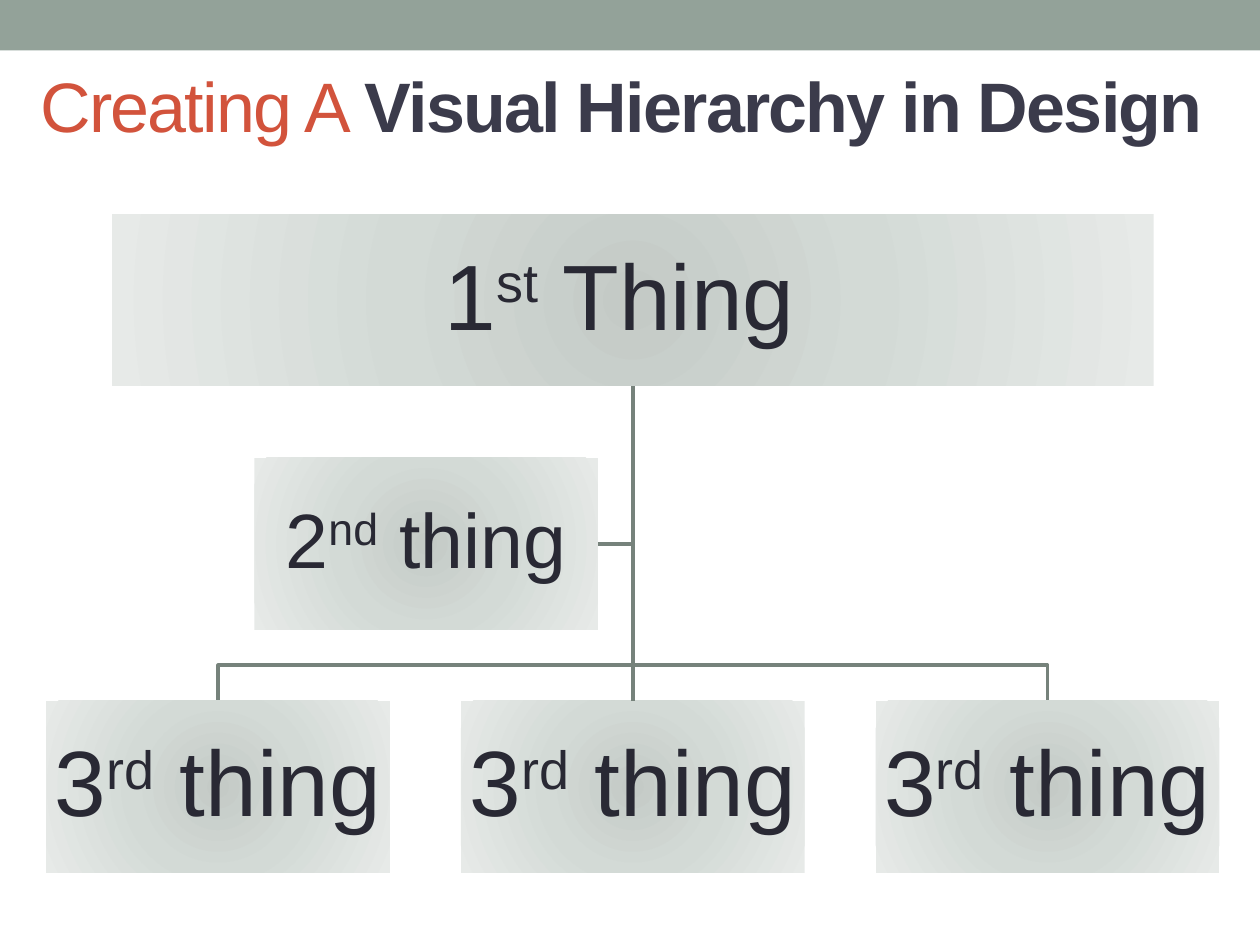
from lxml.etree import SubElement
from pptx import Presentation
from pptx.dml.color import RGBColor
from pptx.enum.shapes import MSO_CONNECTOR as Connector, MSO_SHAPE as Shape
from pptx.enum.text import MSO_ANCHOR as Anchor, MSO_AUTO_SIZE as AutoSize, PP_ALIGN as Align
from pptx.oxml import parse_xml
from pptx.oxml.ns import nsdecls, qn
from pptx.util import Pt

# Content
TITLE = [("Creating A ", "accent", False), ("Visual Hierarchy in Design", "title", True)]
FIRST = ("1", "st", " Thing ")
SECOND = ("2", "nd", " thing")
THIRDS = [("3", "rd", " thing")] * 3

COLORS = {"band": "93A299", "accent": "D2533C", "title": "3B3B4B", "text": "292934",
          "line": "76827B"}
GRADIENT = [(0, "C4CAC6"), (45, "D3DAD6"), (100, "E7EAE8")]
FONT = "Arial"

# Layout in points
WIDTH, HEIGHT = 720, 540
CENTER = 361.6
BOX_WIDTH, BOX_HEIGHT, FIRST_WIDTH = 196.4, 98.2, 595.4
FIRST_TOP, SECOND_TOP, THIRD_TOP = 122.4, 261.6, 400.6
SECOND_LEFT, THIRD_STEP = 145.3, 237
BUS_Y = 380.2
LINE_WIDTH = 2.08


def color(name):
    return RGBColor.from_string(COLORS[name])


def format_run(run, size, color_name, bold=False):
    run.font.name = FONT
    run.font.size = Pt(size)
    run.font.bold = bold
    run.font.color.rgb = color(color_name)


def add_box(slide, left, top, width, parts, size, inset):
    box = slide.shapes.add_shape(Shape.RECTANGLE, Pt(left), Pt(top), Pt(width), Pt(BOX_HEIGHT))
    box.shadow.inherit = False
    box.line.fill.background()
    # Radial gradient, dark in the middle
    stops = "".join(f'<a:gs pos="{position * 1000}"><a:srgbClr val="{value}"/></a:gs>'
                    for position, value in GRADIENT)
    gradient = parse_xml(
        f'<a:gradFill {nsdecls("a")} rotWithShape="1"><a:gsLst>{stops}</a:gsLst>'
        '<a:path path="circle"><a:fillToRect l="100000" t="100000" r="100000" b="100000"/>'
        '</a:path></a:gradFill>')
    box._element.spPr.find(qn("a:prstGeom")).addnext(gradient)

    frame = box.text_frame
    frame.word_wrap = True
    frame.vertical_anchor = Anchor.MIDDLE
    frame.margin_left = frame.margin_right = frame.margin_top = frame.margin_bottom = Pt(inset)
    paragraph = frame.paragraphs[0]
    paragraph.alignment = Align.CENTER
    paragraph.line_spacing = 0.9
    for index, part in enumerate(parts):
        run = paragraph.add_run()
        run.text = part
        format_run(run, size, "text")
        if index == 1:
            run.font._element.set("baseline", "30000")
    return box


def style_line(line):
    line.color.rgb = color("line")
    line.width = Pt(LINE_WIDTH)


def add_elbow(slide, points):
    points = [(Pt(x), Pt(y)) for x, y in points]
    builder = slide.shapes.build_freeform(*points[0])
    builder.add_line_segments(points[1:], close=False)
    elbow = builder.convert_to_shape()
    elbow.shadow.inherit = False
    elbow.fill.background()
    style_line(elbow.line)


presentation = Presentation()
presentation.slide_width, presentation.slide_height = Pt(WIDTH), Pt(HEIGHT)
slide = presentation.slides.add_slide(presentation.slide_layouts[5])

# Top band
band = slide.shapes.add_shape(Shape.RECTANGLE, 0, 0, Pt(WIDTH), Pt(28.8))
band.shadow.inherit = False
band.fill.solid()
band.fill.fore_color.rgb = color("band")
band.line.fill.background()

# Title
title = slide.shapes.title
title.left, title.top, title.width, title.height = Pt(15.8), Pt(28.8), Pt(692.6), Pt(77.8)
frame = title.text_frame
frame.word_wrap = True
frame.auto_size = AutoSize.NONE
frame.vertical_anchor = Anchor.TOP
frame.margin_top = Pt(7)
paragraph = frame.paragraphs[0]
paragraph.alignment = Align.LEFT
for text, color_name, bold in TITLE:
    run = paragraph.add_run()
    run.text = text
    format_run(run, 40, color_name, bold)
    run.font._element.set("spc", "-100")

# Elbow lines to the second box and the outer third boxes
first_bottom = FIRST_TOP + BOX_HEIGHT
second_middle = SECOND_TOP + BOX_HEIGHT / 2
add_elbow(slide, [(CENTER, first_bottom), (CENTER, second_middle),
                  (SECOND_LEFT + BOX_WIDTH, second_middle)])
for x in (CENTER + THIRD_STEP, CENTER - THIRD_STEP):
    add_elbow(slide, [(CENTER, first_bottom), (CENTER, BUS_Y), (x, BUS_Y), (x, THIRD_TOP)])

# Boxes
first = add_box(slide, CENTER - FIRST_WIDTH / 2, FIRST_TOP, FIRST_WIDTH, FIRST, 53, 2.65)
thirds = [add_box(slide, CENTER - BOX_WIDTH / 2 + (index - 1) * THIRD_STEP, THIRD_TOP,
                  BOX_WIDTH, parts, 53, 2.65)
          for index, parts in enumerate(THIRDS)]
add_box(slide, SECOND_LEFT, SECOND_TOP, BOX_WIDTH, SECOND, 44, 2.2)

# Straight trunk line
trunk = slide.shapes.add_connector(Connector.STRAIGHT, Pt(CENTER), Pt(first_bottom),
                                   Pt(CENTER), Pt(THIRD_TOP))
trunk.begin_connect(first, 2)
trunk.end_connect(thirds[1], 0)
style_line(trunk.line)
SubElement(trunk._element.spPr, qn("a:effectLst"))

presentation.save("out.pptx")
